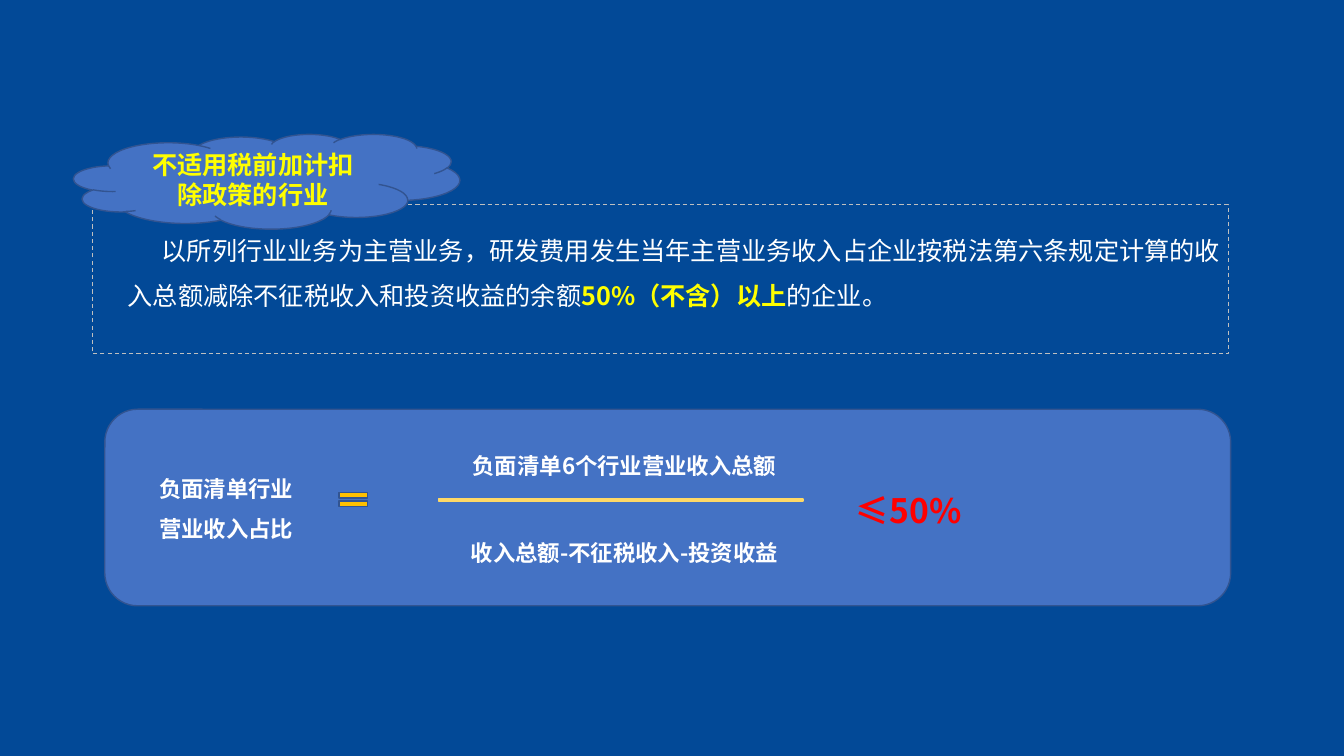
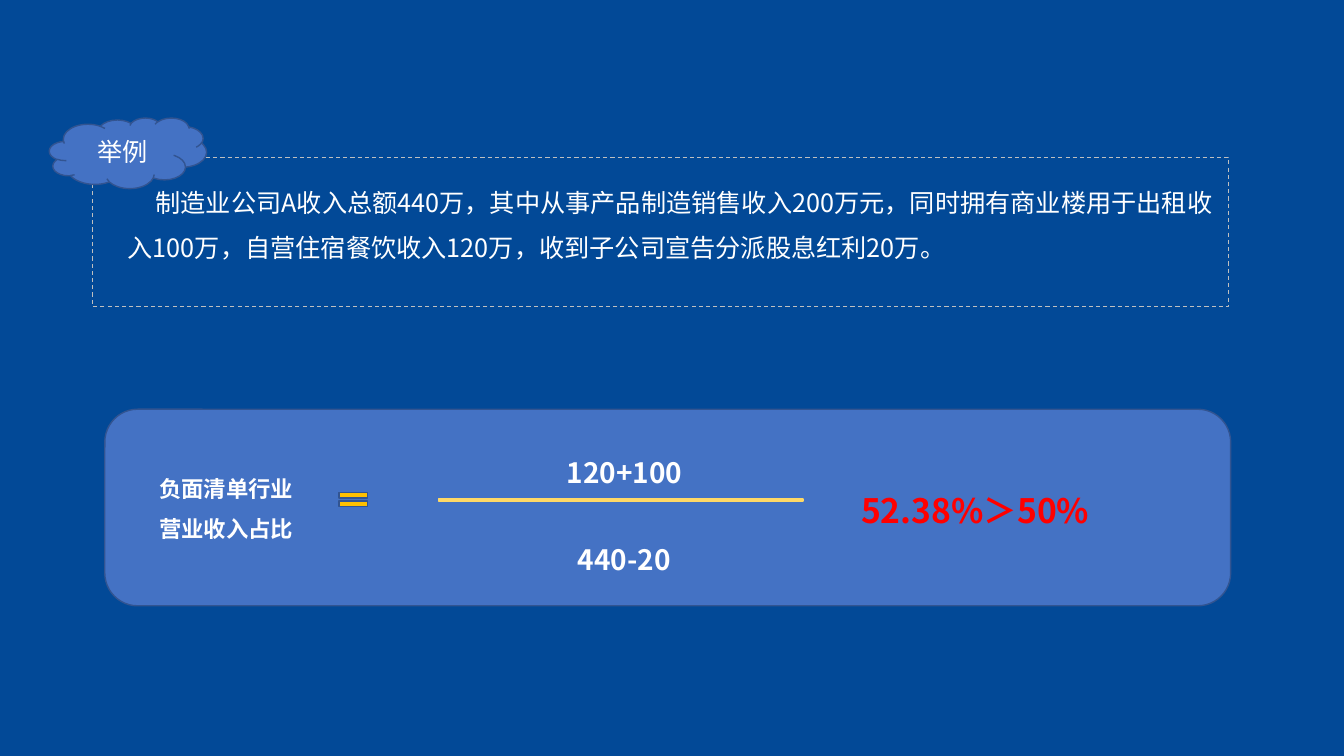
import pptx
import pptx.dml.color
import pptx.enum.dml
import pptx.enum.shapes
import pptx.enum.text
import pptx.oxml.ns
import pptx.util
from dataclasses import dataclass
from lxml import etree

Pt = pptx.util.Pt
SHAPE = pptx.enum.shapes.MSO_SHAPE
ALIGN = pptx.enum.text.PP_ALIGN
DASH = pptx.enum.dml.MSO_LINE


@dataclass(frozen=True)
class Theme:
    font: str = "Noto Sans CJK SC"
    background: str = "024997"
    panel: str = "4472C4"
    outline: str = "325491"
    frame: str = "BFBFBF"
    sign: str = "FFC000"
    bar: str = "FFD966"
    text: str = "FFFFFF"
    accent: str = "FFFF00"
    verdict: str = "FF0000"
    body_size: int = 18
    label_size: int = 16
    figure_size: int = 20
    verdict_size: int = 24


THEME = Theme()


def rgb(code):
    return pptx.dml.color.RGBColor.from_string(code)


class PolicyDeck:
    """Holds the style and the slide being built."""

    def __init__(self, theme):
        self.theme = theme
        self.deck = pptx.Presentation()
        self.deck.slide_width, self.deck.slide_height = Pt(960), Pt(540)
        fill = self.deck.slide_master.background.fill
        fill.solid()
        fill.fore_color.rgb = rgb(theme.background)
        self.slide = None

    def new_slide(self):
        self.slide = self.deck.slides.add_slide(self.deck.slide_layouts[6])

    def styled_run(self, paragraph, text, size, color, bold=False):
        run = paragraph.add_run()
        run.text = text
        look = {"name": self.theme.font, "size": Pt(size), "bold": bold}
        for attribute, value in look.items():
            setattr(run.font, attribute, value)
        run.font.color.rgb = rgb(color)
        # East Asian characters need their own typeface element
        east_asian = etree.SubElement(run.font._element, pptx.oxml.ns.qn("a:ea"))
        east_asian.set("typeface", self.theme.font)

    def shape(self, kind, box, fill=None, line=None, width=1, dash=None):
        item = self.slide.shapes.add_shape(kind, *map(Pt, box))
        item.shadow.inherit = False
        if fill:
            item.fill.solid()
            item.fill.fore_color.rgb = rgb(fill)
        else:
            item.fill.background()
        item.line.color.rgb = rgb(line or self.theme.outline)
        item.line.width = Pt(width)
        if dash:
            item.line.dash_style = dash
        return item

    def text(self, box, paragraphs, size, color=None, align=ALIGN.CENTER,
             bold=True, indent=0):
        """Each paragraph is a list of (text, is_accent) pairs."""
        frame = self.slide.shapes.add_textbox(*map(Pt, box)).text_frame
        frame.word_wrap = True
        frame.auto_size = pptx.enum.text.MSO_AUTO_SIZE.SHAPE_TO_FIT_TEXT
        for index, pieces in enumerate(paragraphs):
            paragraph = frame.add_paragraph() if index else frame.paragraphs[0]
            for attribute, value in {"alignment": align, "line_spacing": 1.5}.items():
                setattr(paragraph, attribute, value)
            if indent:
                paragraph._p.get_or_add_pPr().set("indent", str(Pt(indent)))
            for words, accent in pieces:
                ink = self.theme.accent if accent else color or self.theme.text
                self.styled_run(paragraph, words, size, ink, bold or accent)

    def framed_text(self, top, pieces, indent):
        self.text((84.2, top + 7.2, 801.4, 72.7), [pieces], self.theme.body_size,
                  align=ALIGN.LEFT, bold=False, indent=indent)
        self.shape(SHAPE.RECTANGLE, (66.2, top, 811.4, 106.6),
                   line=self.theme.frame, width=0.75, dash=DASH.DASH)

    def cloud(self, box, title, color, bold):
        frame = self.shape(SHAPE.CLOUD, box, self.theme.panel).text_frame
        layout = {"word_wrap": True, "margin_left": Pt(12), "margin_right": Pt(12),
                  "vertical_anchor": pptx.enum.text.MSO_ANCHOR.MIDDLE}
        for attribute, value in layout.items():
            setattr(frame, attribute, value)
        heading = frame.paragraphs[0]
        heading.alignment = ALIGN.CENTER
        self.styled_run(heading, title, self.theme.body_size, color, bold)

    def formula(self, numerator, denominator, size, verdict, verdict_left,
                verdict_width):
        theme = self.theme
        # Panel and left-hand side
        self.shape(SHAPE.ROUNDED_RECTANGLE, (74.9, 292.3, 804.2, 140.4), theme.panel)
        ratio_name = [[("负面清单行业", False)], [("营业收入占比", False)]]
        self.text((106.6, 326.2, 129.6, 61.9), ratio_name, theme.label_size,
                  align=ALIGN.LEFT)
        self.shape(SHAPE.MATH_EQUAL, (238.3, 348.5, 28.1, 16.6), theme.sign)
        # Fraction
        self.shape(SHAPE.MATH_MINUS, (266.4, 354.2, 354.2, 5.8), theme.sign, theme.bar)
        for top, term in ((309.6, numerator), (372.2, denominator)):
            self.text((305.3, top, 281.5, 2 * size), [[(term, False)]], size)
        # Comparison with the threshold
        self.text((verdict_left, 331.9, verdict_width, 51.1), [[(verdict, False)]],
                  theme.verdict_size, theme.verdict)


def main():
    policy = PolicyDeck(THEME)

    # Rule
    policy.new_slide()
    policy.framed_text(146.2, [
        ("以所列行业业务为主营业务，研发费用发生当年主营业务收入占企业按税法第六条规定"
         "计算的收入总额减除不征税收入和投资收益的余额", False),
        ("50%（不含）以上", True),
        ("的企业。", False)], indent=24.3)
    policy.formula("负面清单6个行业营业收入总额", "收入总额-不征税收入-投资收益",
                   THEME.label_size, "≤50%", 598.3, 101.5)
    policy.cloud((52.6, 95.8, 275.8, 67.7), "不适用税前加计扣除政策的行业",
                 THEME.accent, bold=True)

    # Worked example
    policy.new_slide()
    policy.framed_text(112.3, [
        ("制造业公司A收入总额440万，其中从事产品制造销售收入200万元，同时拥有商业楼用于"
         "出租收入100万，自营住宿餐饮收入120万，收到子公司宣告分派股息红利20万。",
         False)], indent=19.8)
    policy.formula("120+100", "440-20", THEME.figure_size, "52.38%＞50%", 586.8, 219.6)
    policy.cloud((35.3, 84.2, 112.3, 50.4), "举例", THEME.text, bold=False)

    policy.deck.save("out.pptx")


if __name__ == "__main__":
    main()
